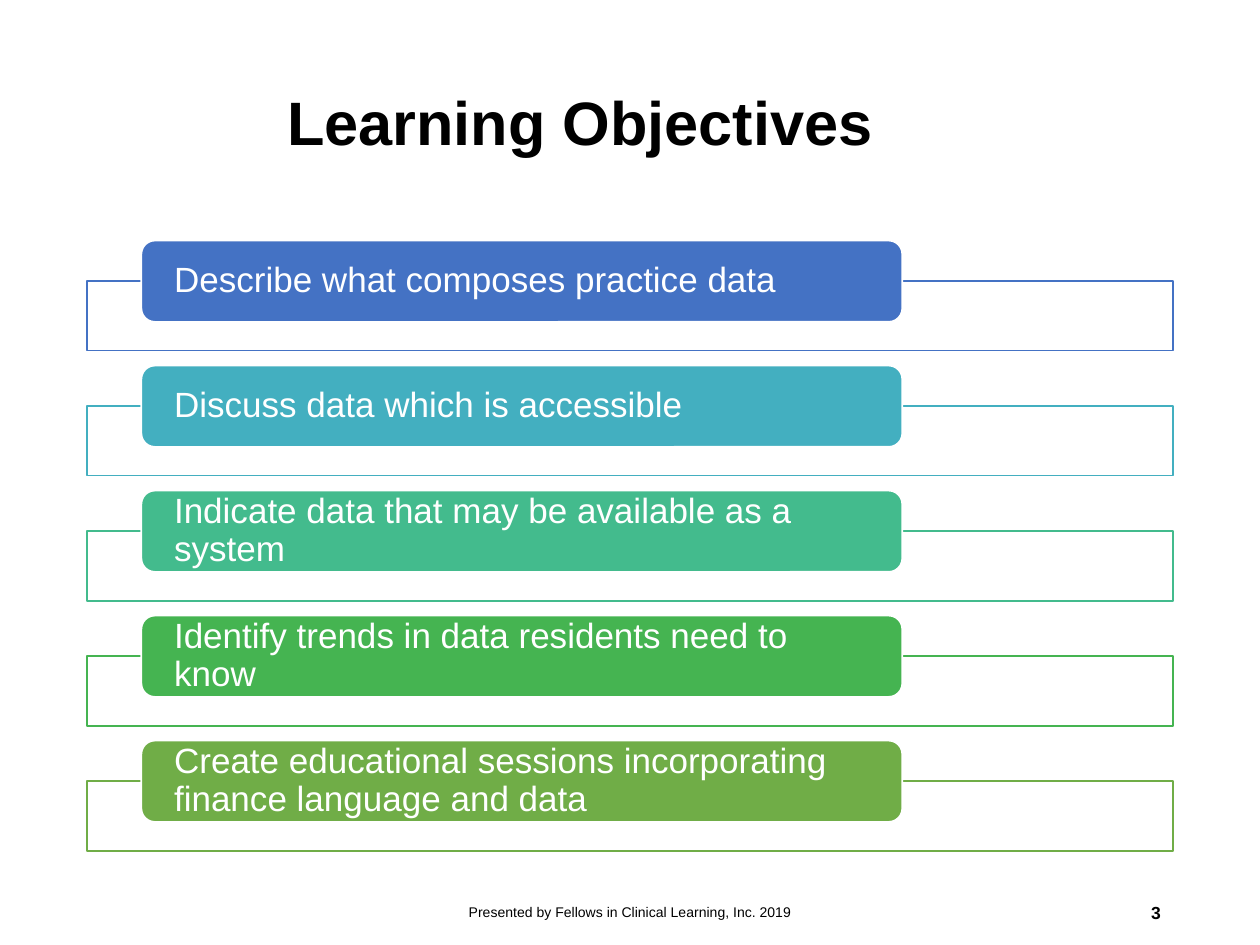
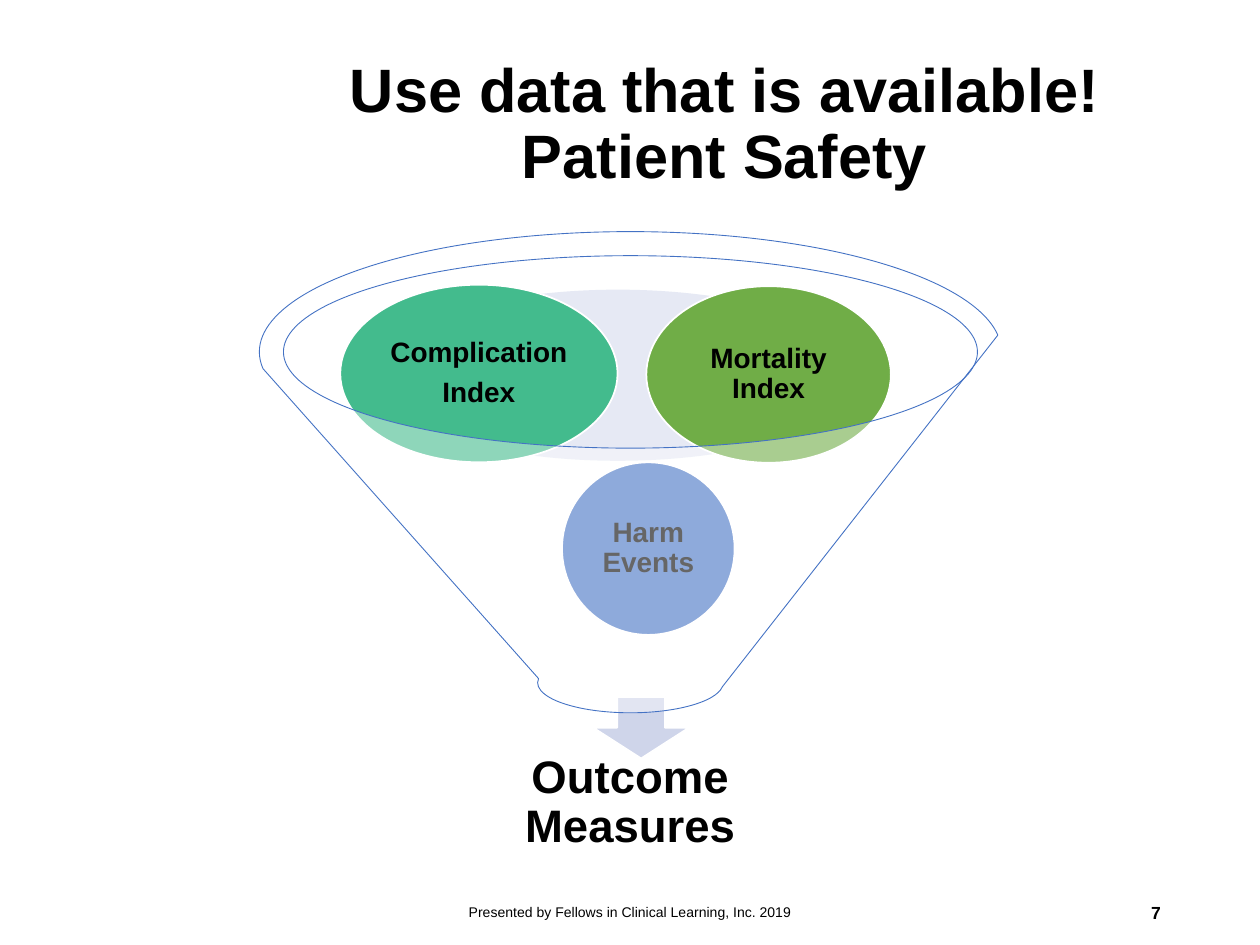
from dataclasses import dataclass

import lxml.etree
import pptx
import pptx.dml.color
import pptx.enum.shapes
import pptx.enum.text
import pptx.oxml.ns
import pptx.util

Cm = pptx.util.Cm
Pt = pptx.util.Pt
Shape = pptx.enum.shapes.MSO_SHAPE
Align = pptx.enum.text.PP_ALIGN


@dataclass(frozen=True)
class Theme:
    font: str = "Arial"
    black: str = "000000"
    white: str = "FFFFFF"
    blue: str = "4472C4"
    cyan: str = "43AFC0"
    teal: str = "43BB8D"
    green: str = "45B451"
    olive: str = "70AD47"
    wash: str = "C1C9E4"
    arrow: str = "CFD5EA"
    title_size: float = 35
    outcome_size: float = 26
    objective_size: float = 20
    measure_size: float = 16
    number_size: float = 10
    footer_size: float = 8
    line_spacing: float = 0.9
    paragraph_gap: float = 0.35  # share of the type size


@dataclass(frozen=True)
class Box:
    """Left, top, width and height in centimetres."""
    left: float
    top: float
    width: float
    height: float

    def lengths(self) -> tuple:
        return Cm(self.left), Cm(self.top), Cm(self.width), Cm(self.height)


@dataclass(frozen=True)
class TextStyle:
    size: float
    color: str = "000000"
    bold: bool = False
    align: Align = Align.CENTER
    spacing: float = 1.0
    inset_x: float = 0.25
    inset_y: float = 0.13


@dataclass(frozen=True)
class Objective:
    text: str
    color: str


@dataclass(frozen=True)
class Measure:
    text: str
    color: str
    box: Box


THEME = Theme()
FOOTER = "Presented by Fellows in Clinical Learning, Inc. 2019"

# Shared places and text styles
TITLE_BOX = Box(5.54, 0.69, 18.14, 3.68)
FOOTER_BOX = Box(8.41, 17.88, 8.59, 1.02)
NUMBER_BOX = Box(17.93, 17.88, 5.72, 1.02)
FOOTER_STYLE = TextStyle(THEME.footer_size)
NUMBER_STYLE = TextStyle(THEME.number_size, bold=True, align=Align.RIGHT)
OBJECTIVE_STYLE = TextStyle(THEME.objective_size, THEME.white, align=Align.LEFT,
                            spacing=THEME.line_spacing, inset_x=0.58, inset_y=0)
MEASURE_STYLE = TextStyle(THEME.measure_size, bold=True, spacing=THEME.line_spacing,
                          inset_x=0.05, inset_y=0.05)
OUTCOME_STYLE = TextStyle(THEME.outcome_size, bold=True, spacing=THEME.line_spacing,
                          inset_x=0.51, inset_y=0.51)

# Objective rows: a tab straddles the top edge of each bar
BAR = Box(1.75, 5.67, 21.9, 1.4)
TAB = Box(2.85, 4.85, 15.34, 1.64)
ROW_PITCH = 2.52
OBJECTIVES = (
    Objective("Describe what composes practice data", THEME.blue),
    Objective("Discuss data which is accessible", THEME.cyan),
    Objective("Indicate data that may be available as a system", THEME.teal),
    Objective("Identify trends in data residents need to know", THEME.green),
    Objective("Create educational sessions incorporating finance language and data",
              THEME.olive),
)

# Funnel diagram
WASH_BOX = Box(7.49, 5.84, 9.93, 3.45)
ARROW_BOX = Box(11.96, 14.05, 1.93, 1.24)
OUTCOME_BOX = Box(8.08, 15.04, 9.25, 2.31)
FUNNEL_BOX = Box(5.23, 4.67, 14.96, 9.7)
MEASURES = (
    Measure("Harm Events", THEME.blue, Box(11.33, 9.32, 3.48, 3.48)),
    Measure("Complication\nIndex", THEME.teal, Box(6.86, 5.74, 5.59, 3.58)),
    Measure("Mortality Index", THEME.olive, Box(13.03, 5.77, 4.93, 3.56)),
)


def rgb(color: str) -> pptx.dml.color.RGBColor:
    return pptx.dml.color.RGBColor.from_string(color)


def write(frame, text: str, style: TextStyle) -> None:
    frame.text = text
    frame.word_wrap = True
    frame.auto_size = pptx.enum.text.MSO_AUTO_SIZE.NONE
    frame.vertical_anchor = pptx.enum.text.MSO_ANCHOR.MIDDLE
    frame.margin_left = frame.margin_right = Cm(style.inset_x)
    frame.margin_top = frame.margin_bottom = Cm(style.inset_y)
    for index, paragraph in enumerate(frame.paragraphs):
        paragraph.alignment = style.align
        paragraph.line_spacing = style.spacing
        if index < len(frame.paragraphs) - 1:
            paragraph.space_after = Pt(style.size * THEME.paragraph_gap)
        for run in paragraph.runs:
            run.font.name = THEME.font
            run.font.size = Pt(style.size)
            run.font.bold = style.bold
            run.font.color.rgb = rgb(style.color)


def add_text(slide, box: Box, text: str, style: TextStyle) -> None:
    write(slide.shapes.add_textbox(*box.lengths()).text_frame, text, style)


def add_figure(slide, preset: Shape, box: Box, fill: str, line: str = "",
               line_width: float = 1, opacity: int = 100):
    figure = slide.shapes.add_shape(preset, *box.lengths())
    figure.shadow.inherit = False
    figure.fill.solid()
    figure.fill.fore_color.rgb = rgb(fill)
    if opacity < 100:
        solid = figure.fill._xPr.find(pptx.oxml.ns.qn("a:solidFill"))
        lxml.etree.SubElement(solid[0], pptx.oxml.ns.qn("a:alpha"),
                              val=str(opacity * 1000))
    if line:
        figure.line.color.rgb = rgb(line)
        figure.line.width = Pt(line_width)
    else:
        figure.line.fill.background()
    return figure


def add_slide(deck, title: str, number: int, title_align: Align):
    slide = deck.slides.add_slide(deck.slide_layouts.get_by_name("Title Only"))
    heading = slide.shapes.title
    heading.left, heading.top, heading.width, heading.height = TITLE_BOX.lengths()
    write(heading.text_frame, title,
          TextStyle(THEME.title_size, THEME.black, True, title_align,
                    THEME.line_spacing))
    add_text(slide, FOOTER_BOX, FOOTER, FOOTER_STYLE)
    add_text(slide, NUMBER_BOX, str(number), NUMBER_STYLE)
    return slide


def add_objective(slide, row: int, objective: Objective) -> None:
    shift = row * ROW_PITCH
    bar = Box(BAR.left, BAR.top + shift, BAR.width, BAR.height)
    tab_box = Box(TAB.left, TAB.top + shift, TAB.width, TAB.height)
    add_figure(slide, Shape.RECTANGLE, bar, THEME.white, objective.color, opacity=90)
    tab = add_figure(slide, Shape.ROUNDED_RECTANGLE, tab_box, objective.color,
                     THEME.white)
    write(tab.text_frame, objective.text, OBJECTIVE_STYLE)


def build_objectives(deck) -> None:
    slide = add_slide(deck, "Learning Objectives", 3, Align.LEFT)
    for row, objective in enumerate(OBJECTIVES):
        add_objective(slide, row, objective)


def build_patient_safety(deck) -> None:
    slide = add_slide(deck, "Use data that is available!\vPatient Safety", 7,
                      Align.CENTER)
    add_figure(slide, Shape.OVAL, WASH_BOX, THEME.wash, opacity=40)
    add_figure(slide, Shape.DOWN_ARROW, ARROW_BOX, THEME.arrow, THEME.white)
    add_text(slide, OUTCOME_BOX, "Outcome Measures", OUTCOME_STYLE)
    for measure in MEASURES:
        ball = add_figure(slide, Shape.OVAL, measure.box, measure.color, THEME.white)
        write(ball.text_frame, measure.text, MEASURE_STYLE)
    # The translucent funnel lies over the measures
    add_figure(slide, Shape.FUNNEL, FUNNEL_BOX, THEME.white, THEME.blue, 0.5, 40)


def main() -> None:
    deck = pptx.Presentation()
    deck.slide_width, deck.slide_height = Cm(25.4), Cm(19.05)
    build_objectives(deck)
    build_patient_safety(deck)
    deck.save("out.pptx")


if __name__ == "__main__":
    main()
